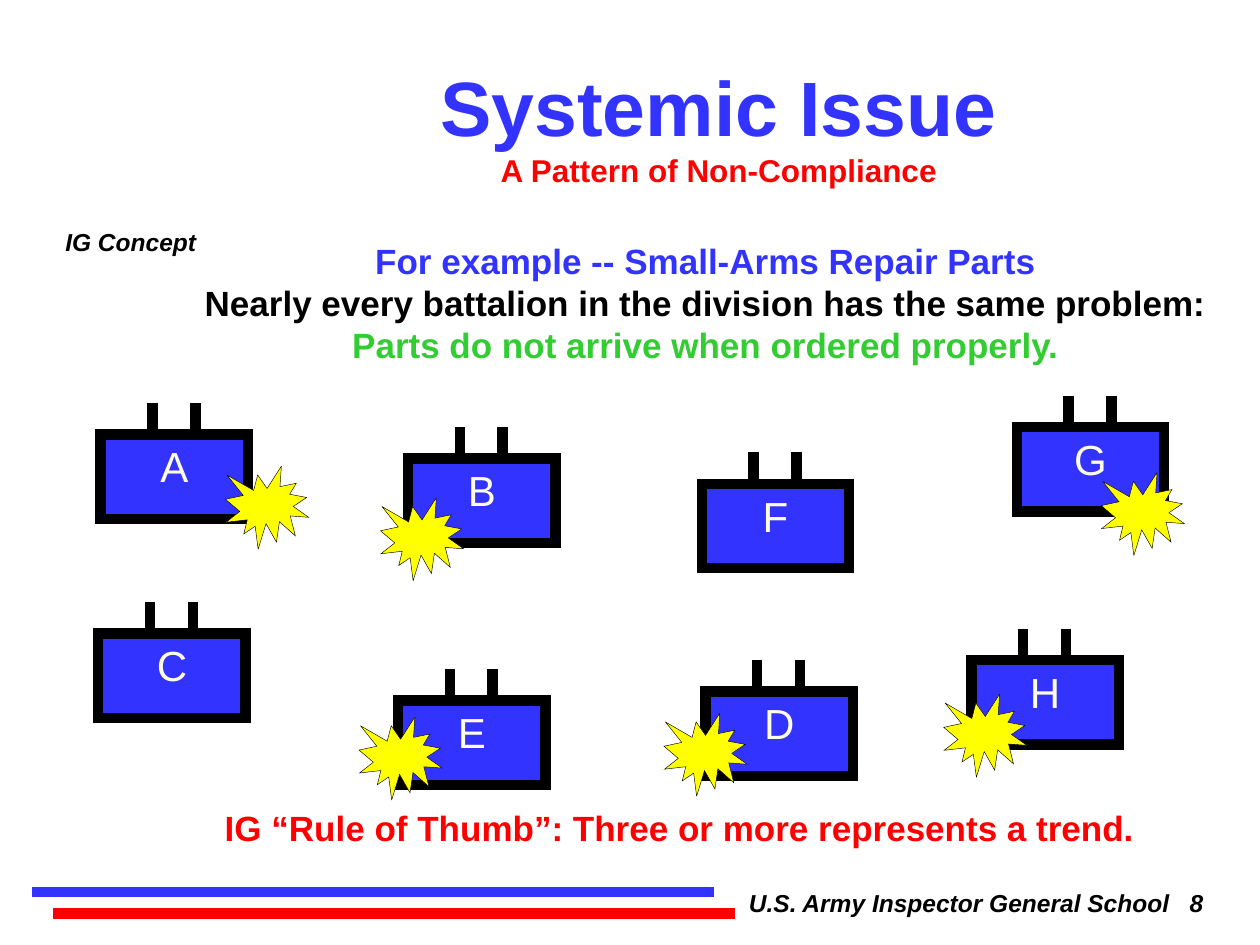
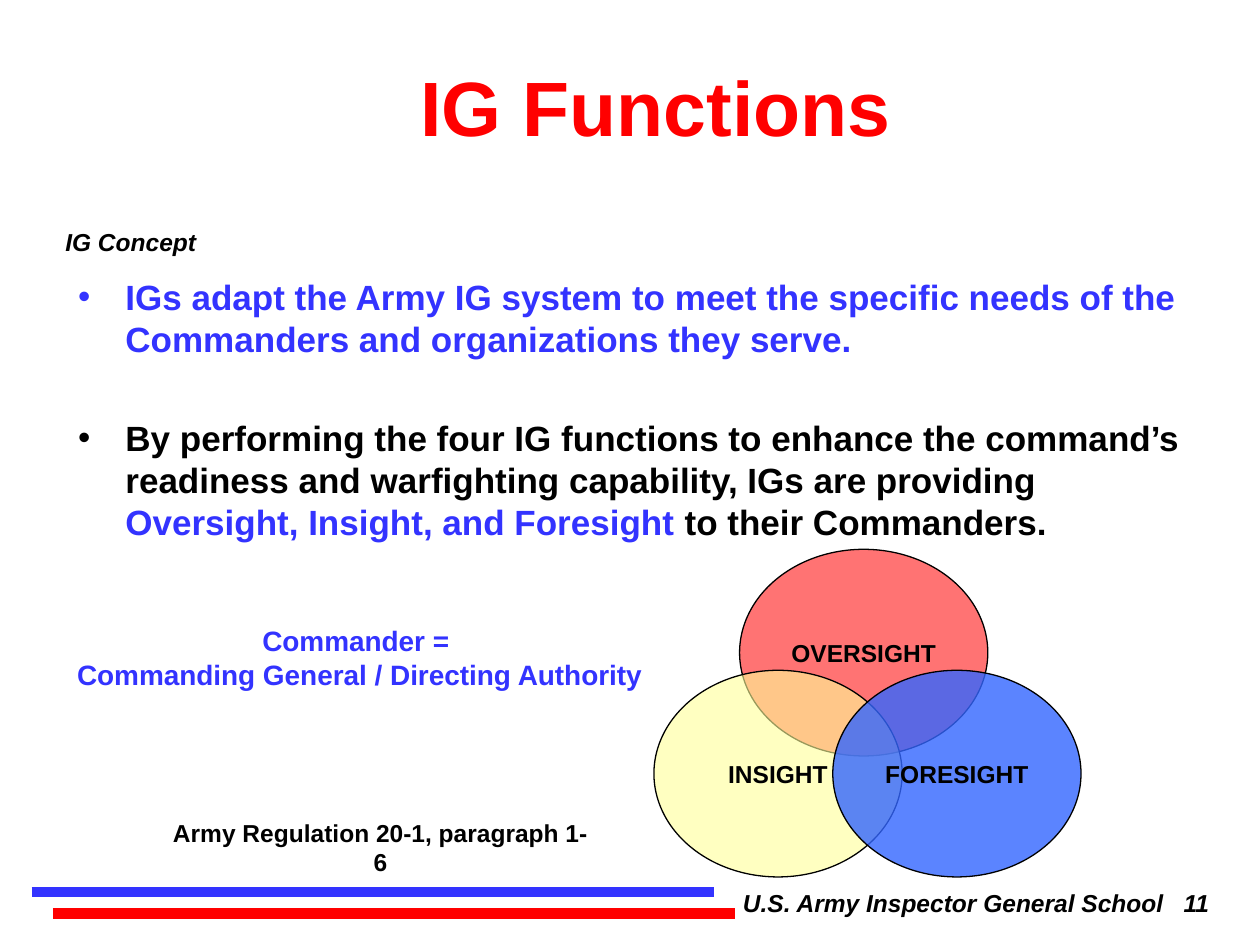
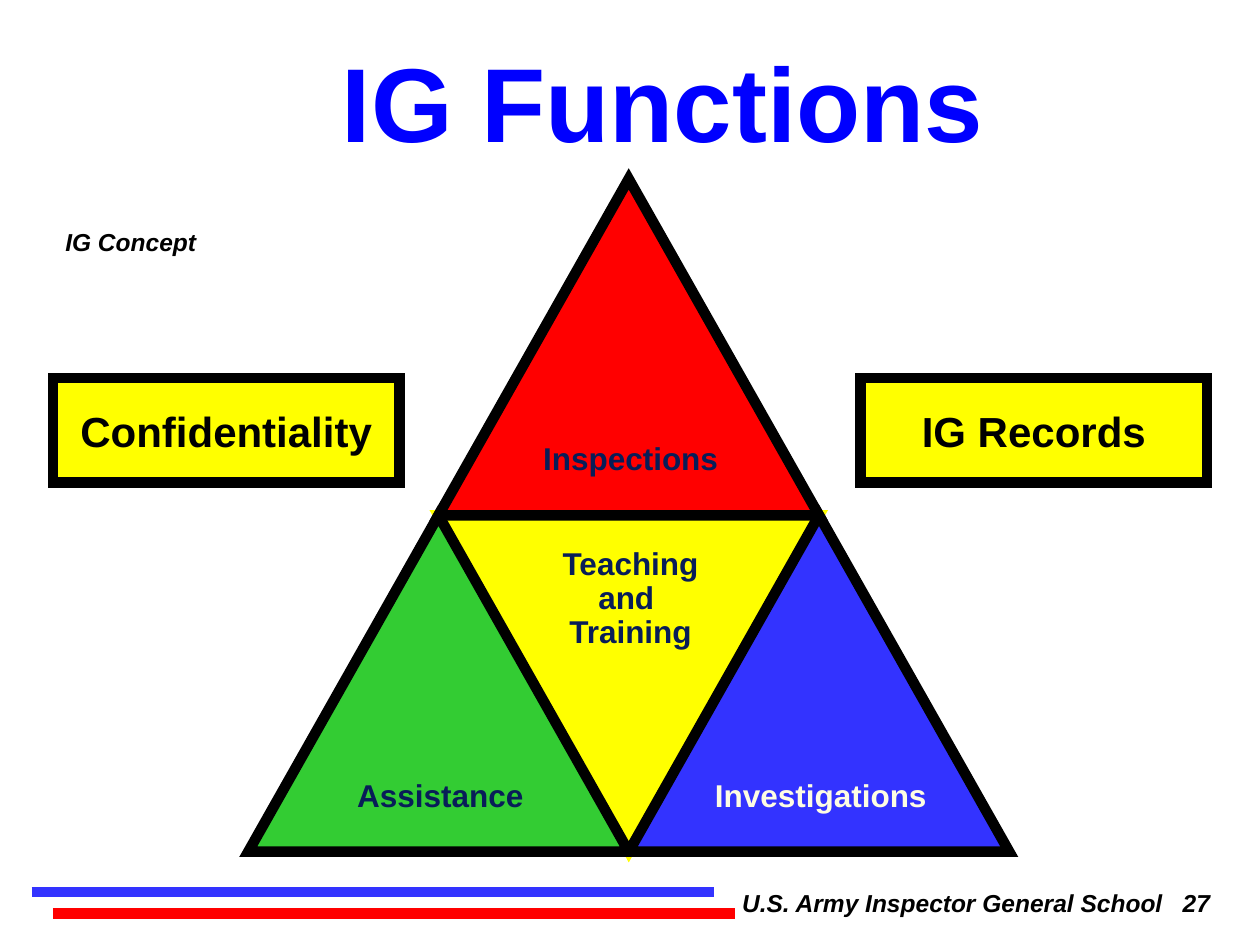
from lxml.etree import SubElement
from pptx import Presentation
from pptx.dml.color import RGBColor
from pptx.enum.shapes import MSO_CONNECTOR, MSO_SHAPE
from pptx.enum.text import MSO_ANCHOR, MSO_AUTO_SIZE, PP_ALIGN
from pptx.oxml.ns import qn
from pptx.util import Inches, Pt


class Theme:
    font = "Arial"
    blue, red, green, yellow = "3333FF", "FF0000", "33CC33", "FFFF00"
    black, cream, navy, vivid = "000000", "FEFDE3", "081D58", "0000FF"
    coral, straw, azure = "FF5050", "FFFF99", "3366FF"
    small, note, label, text, name, title, huge = 14, 16, 18, 20, 24, 44, 60
    bar, thin, hair = 6, 0.75, 0.25


deck = Presentation()
deck.slide_width, deck.slide_height = Inches(10), Inches(7.5)
cell = deck.slide_width // 10  # the grid has 10 columns and 7.5 rows


def style(item, ink, width, fill=None, alpha=None):
    """Outline a shape or connector, fill it and drop its shadow."""
    item.line.color.rgb = RGBColor.from_string(ink)
    item.line.width = Pt(width)
    props = item.element.spPr
    SubElement(props.find(qn("a:ln")), qn("a:miter"), lim="800000")
    if fill is None:
        SubElement(props, qn("a:effectLst"))
        return
    item.shadow.inherit = False
    item.fill.solid()
    item.fill.fore_color.rgb = RGBColor.from_string(fill)
    if alpha:
        tint = props.find(qn("a:solidFill")).find(qn("a:srgbClr"))
        SubElement(tint, qn("a:alpha"), val=str(alpha * 1000))


def write(frame, lines, size, ink=Theme.black, bold=True, italic=False,
          align=PP_ALIGN.CENTER, anchor=MSO_ANCHOR.TOP, wrap=False,
          gap=0, pitch=1.0):
    """Write paragraphs; a line is a string or a list of (text, ink, size)."""
    for key, value in {"auto_size": MSO_AUTO_SIZE.NONE, "word_wrap": wrap,
                       "vertical_anchor": anchor}.items():
        setattr(frame, key, value)
    for i, line in enumerate(lines):
        para = frame.add_paragraph() if i else frame.paragraphs[0]
        para.alignment, para.line_spacing = align, pitch
        para.space_before = Pt(gap if i else 0)
        for part in [(line, ink, size)] if isinstance(line, str) else line:
            if part[0] == "\n":
                para.add_line_break()
                continue
            run = para.add_run()
            run.text = part[0]
            look = {"name": Theme.font, "size": Pt(part[2]),
                    "bold": bold, "italic": italic}
            for key, value in look.items():
                setattr(run.font, key, value)
            run.font.color.rgb = RGBColor.from_string(part[1])


# Slides with their titles, bars and footers
heads = [
    (5, 8, (1.83, 0.57, 7.75, 0.83),
     [("Systemic Issue", Theme.blue, Theme.title), ("\n",),
      ("A Pattern of Non-Compliance", Theme.red, Theme.label)]),
    (1, 11, (1.33, 0.42, 7.75, 0.83),
     [("IG Functions", Theme.red, Theme.title)]),
    (5, 27, (0.75, 0.17, 9.02, 1.25),
     [("IG Functions", Theme.vivid, Theme.huge)]),
]
bars = [(0.25, 5.67, 7.08, Theme.blue), (0.42, 5.83, 7.25, Theme.red)]
slant = {"size": Theme.small, "italic": True, "wrap": True}
slides, notes = [], []
for layout, number, box, head in heads:
    slide = deck.slides.add_slide(deck.slide_layouts[layout])
    slides.append(slide)
    title = slide.shapes.title
    for key, value in zip(("left", "top", "width", "height"), box):
        setattr(title, key, int(value * cell))
    write(title.text_frame, [head], Theme.title, anchor=MSO_ANCHOR.MIDDLE,
          wrap=True)
    for left, right, row, ink in bars:
        bar = slide.shapes.add_connector(
            MSO_CONNECTOR.STRAIGHT,
            *[int(v * cell) for v in (left, row, right, row)])
        style(bar, ink, Theme.bar)
    notes += [
        (slide, (0.42, 1.75, 4.5, 0.5), ["IG Concept"],
         {**slant, "align": PP_ALIGN.LEFT}),
        (slide, (5.5, 7, 4.5, 0.5),
         [[("U.S. Army Inspector General School\u00a0\u00a0 ".replace("\u00a0", " ")
            + str(number), Theme.black, Theme.small)]], slant),
    ]
issue, roles, model = slides

# Battalions: name, column, row and offset of the burst
units = [
    ("B", 3.24, 3.64, (-0.22, 0.31)), ("D", 5.6, 5.49, (-0.33, 0.17)),
    ("H", 7.71, 5.24, (-0.22, 0.27)), ("G", 8.07, 3.39, (0.67, 0.36)),
    ("A", 0.8, 3.45, (0.99, 0.25)), ("F", 5.57, 3.84, None),
    ("E", 3.16, 5.56, (-0.31, 0.13)), ("C", 0.78, 5.03, None),
]
for name, col, row, burst in units:
    group = issue.shapes.add_group_shape()
    block = group.shapes.add_shape(
        MSO_SHAPE.RECTANGLE,
        *[int(v * cell) for v in (col, row, 1.17, 0.67)])
    style(block, Theme.black, Theme.bar, Theme.blue)
    write(block.text_frame, [name], Theme.name, Theme.cream, bold=False)
    for step in (0.41, 0.75):
        stem = group.shapes.add_connector(
            MSO_CONNECTOR.STRAIGHT,
            *[int(v * cell) for v in (col + step, row - 0.25, col + step, row)])
        style(stem, Theme.black, Theme.bar)
    if burst:
        spark = issue.shapes.add_shape(
            MSO_SHAPE.EXPLOSION1,
            *[int(v * cell) for v in (col + burst[0], row + burst[1], 0.66, 0.66)])
        style(spark, Theme.black, Theme.hair, Theme.yellow)

# Bulleted list of the functions
body = roles.placeholders[1]
for key, value in zip(("left", "top", "width", "height"), (0.52, 2.14, 9, 2.3)):
    setattr(body, key, int(value * cell))
write(body.text_frame, [
    [("IGs adapt the Army IG system to meet the specific needs of the "
      "Commanders and organizations they serve.", Theme.blue, Theme.text)],
    [("By performing the four IG functions to enhance the command’s readiness "
      "and warfighting capability, IGs are providing ", Theme.black, Theme.text),
     ("Oversight, Insight, and Foresight ", Theme.blue, Theme.text),
     ("to their Commanders.", Theme.black, Theme.text)],
], Theme.text, align=PP_ALIGN.LEFT, wrap=True, gap=32)

# Overlapping circles
rings = [("OVERSIGHT", 5.87, 4.36, Theme.coral, 80),
         ("INSIGHT", 5.19, 5.32, Theme.straw, 60),
         ("FORESIGHT", 6.61, 5.32, Theme.azure, 80)]
for name, col, row, fill, alpha in rings:
    ring = roles.shapes.add_shape(
        MSO_SHAPE.OVAL, *[int(v * cell) for v in (col, row, 1.97, 1.64)])
    style(ring, Theme.black, Theme.thin, fill, alpha)
    write(ring.text_frame, [name], Theme.small, anchor=MSO_ANCHOR.MIDDLE)

# Side boxes and the triangle built from four
for name, col in (("Confidentiality", 0.42), ("IG Records", 6.83)):
    side = model.shapes.add_shape(
        MSO_SHAPE.RECTANGLE, *[int(v * cell) for v in (col, 3, 2.75, 0.83)])
    style(side, Theme.black, Theme.bar, Theme.yellow)
    write(side.text_frame, [name], Theme.name, anchor=MSO_ANCHOR.MIDDLE)

base, rise = 3.02, 2.67
parts = [  # half steps across, steps down, turn, fill, outline, label
    (1, 1, 180, Theme.yellow, Theme.yellow, Theme.navy,
     ["Teaching", "and ", "Training"]),
    (0, 1, 0, Theme.green, Theme.black, Theme.navy, ["Assistance"]),
    (2, 1, 0, Theme.blue, Theme.black, Theme.cream, ["Investigations"]),
    (1, 0, 0, Theme.red, Theme.black, Theme.navy, ["Inspections"]),
]
for across, down, turn, fill, edge, ink, label in parts:
    col, row = 1.97 + across * base / 2, 1.42 + down * rise
    part = model.shapes.add_shape(
        MSO_SHAPE.ISOSCELES_TRIANGLE,
        *[int(v * cell) for v in (col, row, base, rise)])
    part.rotation = turn
    style(part, edge, Theme.bar, fill)
    drop, high = (0.21, 0.91) if turn else (2.05, 0.37)
    notes.append((model, (col - 0.06, row + drop, 3.17, high), label,
                  {"size": Theme.label, "ink": ink, "pitch": 0.9, "wrap": True}))

# Free text
notes += [
    (issue, (1.5, 1.85, 8.2, 1.11),
     [[("For example -- Small-Arms Repair Parts", Theme.blue, Theme.text)],
      "Nearly every battalion in the division has the same problem:",
      [("Parts do not arrive when ordered properly.", Theme.green, Theme.text)]],
     {"size": Theme.text}),
    (issue, (1.66, 6.35, 7.47, 0.44),
     ["IG “Rule of Thumb”: Three or more represents a trend."],
     {"size": Theme.text, "ink": Theme.red}),
    (roles, (1.27, 6.44, 3.5, 0.33), ["Army Regulation 20-1, paragraph 1-6"],
     {"size": Theme.small, "wrap": True}),
    (roles, (0.48, 4.9, 4.75, 0.64),
     ["Commander = ", "Commanding General / Directing Authority"],
     {"size": Theme.note, "ink": Theme.blue}),
]
for slide, box, lines, form in notes:
    frame = slide.shapes.add_textbox(*[int(v * cell) for v in box]).text_frame
    write(frame, lines, **form)

deck.save("out.pptx")
